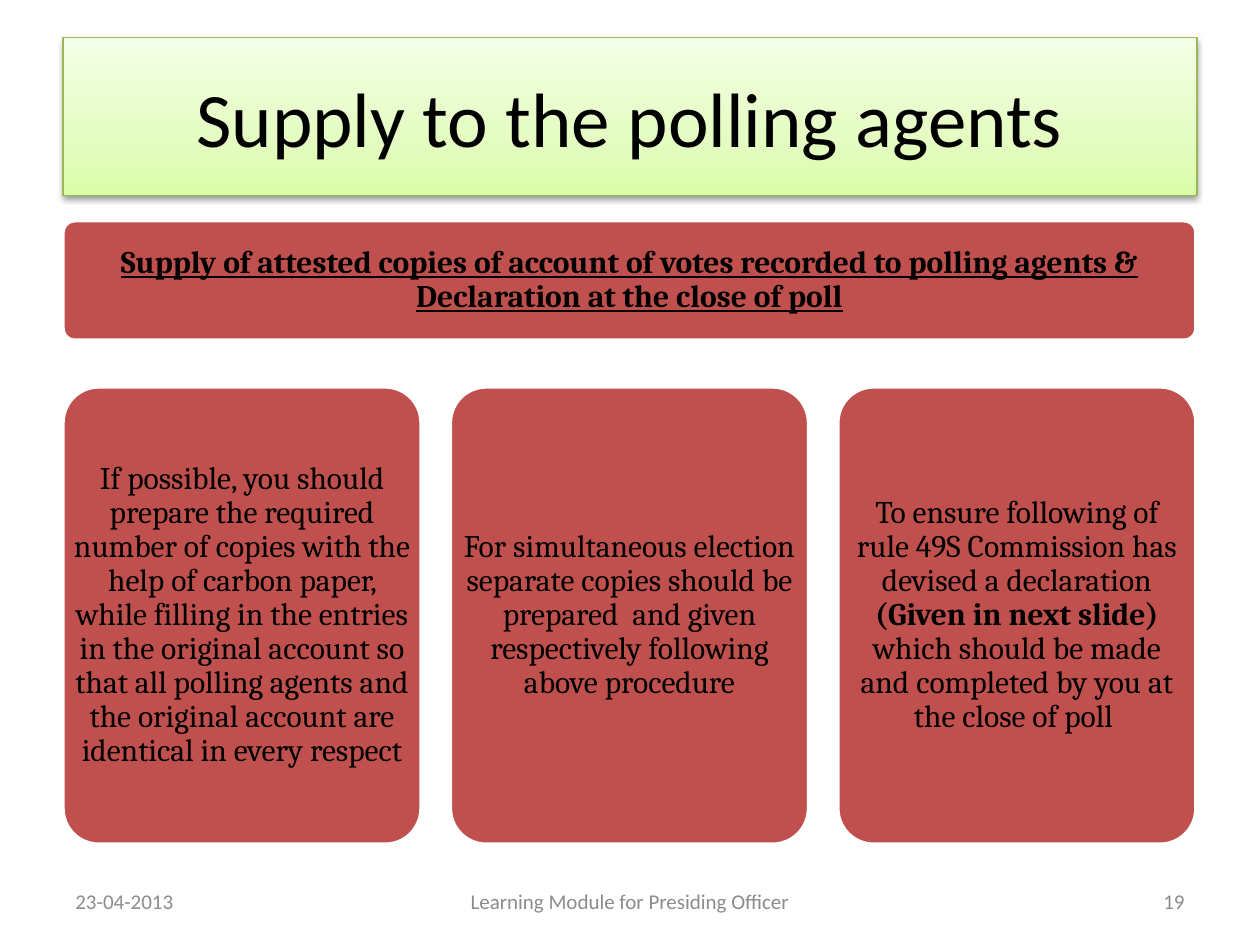
from copy import deepcopy
from dataclasses import dataclass

from lxml import etree
from pptx import Presentation
from pptx.dml.color import RGBColor
from pptx.enum.shapes import MSO_SHAPE
from pptx.enum.text import MSO_ANCHOR, PP_ALIGN
from pptx.oxml import parse_xml
from pptx.oxml.ns import nsdecls, qn
from pptx.util import Cm, Pt

RECTANGLE = MSO_SHAPE.RECTANGLE
ROUNDED = MSO_SHAPE.ROUNDED_RECTANGLE
MIDDLE = MSO_ANCHOR.MIDDLE
LEFT, CENTER, RIGHT = PP_ALIGN.LEFT, PP_ALIGN.CENTER, PP_ALIGN.RIGHT


@dataclass(frozen=True)
class Theme:
    heading_font: str = "Calibri"
    body_font: str = "Cambria"
    title_size: int = 44
    body_size: int = 18
    footer_size: int = 12
    text: str = "000000"
    muted: str = "8C8C8C"
    card: str = "C0504D"
    card_line: str = "FFFFFF"
    title_line: str = "98B955"
    shadow: str = "000000"
    title_gradient: tuple = ((0, "DAFDA7"), (0.35, "E4FCC2"), (1, "F5FFE7"))


class SlideBuilder:
    def __init__(self, slide, theme):
        self.slide = slide
        self.theme = theme

    def set_text(self, shape, runs, font, size, color, align=CENTER):
        frame = shape.text_frame
        frame.word_wrap = True
        frame.vertical_anchor = MIDDLE
        paragraph = frame.paragraphs[0]
        paragraph.alignment = align
        paragraph.font.name = font
        paragraph.font.size = Pt(size)
        paragraph.font.color.rgb = RGBColor.from_string(color)
        for text, bold in runs:
            run = paragraph.add_run()
            run.text = text
            if bold:
                run.font.bold = True
        return paragraph

    def outline(self, shape, color, width):
        shape.line.color.rgb = RGBColor.from_string(color)
        shape.line.width = Pt(width)

    def title(self, text, left, top, width, height):
        theme = self.theme
        shape = self.slide.shapes.add_shape(RECTANGLE, left, top, width, height)
        shape.fill.gradient()
        shape.fill.gradient_angle = 90
        stop_list = shape._element.spPr.find(".//" + qn("a:gsLst"))
        stop_list.append(deepcopy(stop_list[0]))
        for stop, (position, color) in zip(shape.fill.gradient_stops, theme.title_gradient):
            stop.position = position
            stop.color.rgb = RGBColor.from_string(color)
        self.outline(shape, theme.title_line, 0.75)
        self.drop_shadow(shape)
        self.set_text(shape, [(text, False)], theme.heading_font, theme.title_size, theme.text)

    def drop_shadow(self, shape):
        shape.shadow.inherit = False
        effects = shape._element.spPr.find(qn("a:effectLst"))
        shadow = parse_xml(
            f'<a:outerShdw {nsdecls("a")} blurRad="{Pt(3.1)}" dist="{Pt(1.6)}" '
            'dir="5400000" rotWithShape="0"/>'
        )
        color = etree.SubElement(shadow, qn("a:srgbClr"), val=self.theme.shadow)
        etree.SubElement(color, qn("a:alpha"), val="38000")
        effects.append(shadow)

    def card(self, runs, left, top, width, height, underline=False):
        theme = self.theme
        shape = self.slide.shapes.add_shape(ROUNDED, left, top, width, height)
        shape.adjustments[0] = 0.1
        shape.shadow.inherit = False
        shape.fill.solid()
        shape.fill.fore_color.rgb = RGBColor.from_string(theme.card)
        self.outline(shape, theme.card_line, 2)
        label = self.slide.shapes.add_textbox(left, top, width, height)
        frame = label.text_frame
        frame.margin_left = frame.margin_right = Cm(0.18)
        frame.margin_top = frame.margin_bottom = Cm(0.18)
        paragraph = self.set_text(label, runs, theme.body_font, theme.body_size, theme.text)
        paragraph.line_spacing = 0.9
        if underline:
            paragraph.font.underline = True

    def footer(self, text, left, width, align):
        theme = self.theme
        box = self.slide.shapes.add_textbox(left, Cm(17.65), width, Cm(1.02))
        self.set_text(box, [(text, False)], theme.heading_font, theme.footer_size, theme.muted, align)


def main():
    presentation = Presentation()
    presentation.slide_width = Cm(25.4)
    presentation.slide_height = Cm(19.05)
    slide = presentation.slides.add_slide(presentation.slide_layouts[6])
    builder = SlideBuilder(slide, Theme())

    margin = Cm(1.27)
    content_width = Cm(22.84)
    builder.title("Supply to the polling agents", margin, Cm(0.76), Cm(22.86), Cm(3.18))
    builder.card(
        [("Supply of attested copies of account of votes recorded to polling agents "
          "& Declaration at the close of poll", True)],
        margin, Cm(4.45), content_width, Cm(2.41), underline=True,
    )

    cards = [
        [("If possible, you should prepare the required number of copies with the help "
          "of carbon paper, while filling in the entries in the original account so that "
          "all polling agents and the original account are identical in every respect", False)],
        [("For simultaneous election separate copies should be prepared  and given "
          "respectively following above procedure", False)],
        [("To ensure following of rule 49S Commission has devised a declaration ", False),
         ("(Given in next slide)", True),
         (" which should be made and completed by you at the close of poll ", False)],
    ]
    card_width = Cm(7.22)
    pitch = (content_width - card_width) // (len(cards) - 1)
    for index, runs in enumerate(cards):
        builder.card(runs, margin + index * pitch, Cm(7.8), card_width, Cm(9.22))

    builder.footer("23-04-2013", margin, Cm(5.93), LEFT)
    builder.footer("Learning Module for Presiding Officer", Cm(8.68), Cm(8.04), CENTER)
    builder.footer("19", Cm(18.2), Cm(5.93), RIGHT)
    presentation.save("out.pptx")


if __name__ == "__main__":
    main()
